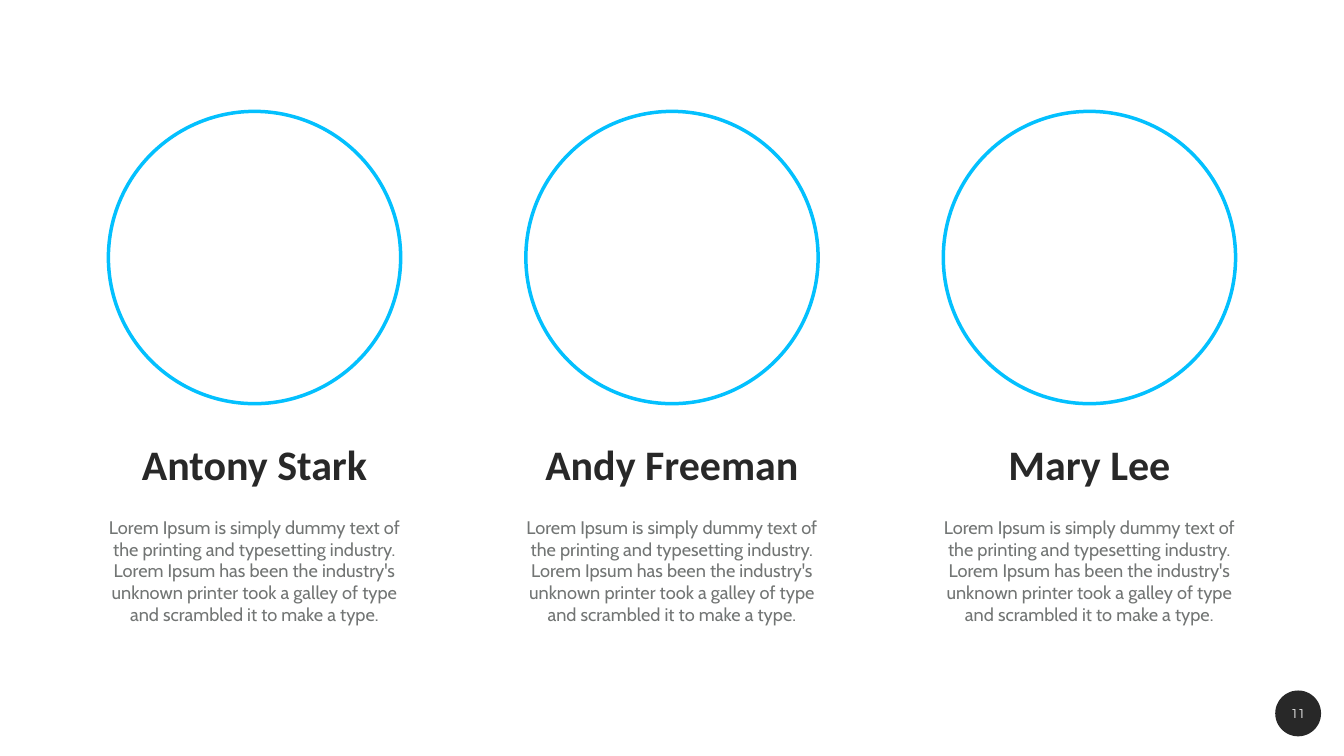
from pptx import Presentation
from pptx.dml.color import RGBColor
from pptx.enum.shapes import MSO_SHAPE as Shape
from pptx.enum.text import MSO_ANCHOR as Anchor, PP_ALIGN as Align
from pptx.util import Inches, Pt

BIO = (
    "Lorem Ipsum is simply dummy text of the printing and typesetting industry. "
    "Lorem Ipsum has been the industry's unknown printer took a galley of type "
    "and scrambled it to make a type."
)
TEAM = [("Antony Stark", BIO), ("Andy Freeman", BIO), ("Mary Lee", BIO)]
PAGE_NUMBER = "11"

DARK = RGBColor(0x28, 0x28, 0x28)
GREY = RGBColor(0x72, 0x75, 0x74)
CYAN = RGBColor(0x03, 0xC0, 0xFE)
WHITE = RGBColor(0xFF, 0xFF, 0xFF)

WIDTH, HEIGHT = 26.67, 15
COLUMN_PITCH = WIDTH * 0.3106
PORTRAIT_TOP, PORTRAIT_SIZE = 2.21, 5.8
NAME_TOP, NAME_WIDTH, NAME_HEIGHT = 8.71, 6.4, 1.11
BIO_TOP, BIO_WIDTH, BIO_HEIGHT = 10.2, 6.25, 2.54
BADGE_CENTER, BADGE_TOP, BADGE_SIZE = 25.76, 13.7, 0.91
NUMBER_TOP, NUMBER_WIDTH, NUMBER_HEIGHT = 13.96, 0.66, 0.39
INSET = 0.04


def centered_box(center, top, width, height):
    """Return the box in slide units for a shape centred on a vertical axis."""
    return [Inches(value) for value in (center - width / 2, top, width, height)]


def add_text(slide, text, box, *, font, size, color, bold=False,
             anchor=Anchor.TOP, line_spacing=None, tracking=None):
    """Add a centred text box with the given format."""
    frame = slide.shapes.add_textbox(*box).text_frame
    frame.word_wrap = True
    frame.vertical_anchor = anchor
    frame.margin_left = frame.margin_right = Inches(INSET)
    frame.margin_top = frame.margin_bottom = Inches(INSET)
    paragraph = frame.paragraphs[0]
    paragraph.alignment = Align.CENTER
    paragraph.line_spacing = line_spacing
    run = paragraph.add_run()
    run.text = text
    run.font.name = font
    run.font.size = Pt(size)
    run.font.bold = bold
    run.font.color.rgb = color
    if tracking:
        run.font._element.set("spc", str(round(tracking * 100)))


def add_circle(slide, box, *, fill=None, line=None, line_width=5):
    """Add a circle that is filled, outlined or both."""
    circle = slide.shapes.add_shape(Shape.OVAL, *box)
    circle.shadow.inherit = False
    if fill is None:
        circle.fill.background()
    else:
        circle.fill.solid()
        circle.fill.fore_color.rgb = fill
    if line is None:
        circle.line.fill.background()
    else:
        circle.line.color.rgb = line
        circle.line.width = Pt(line_width)


def main():
    """Build the team slide."""
    presentation = Presentation()
    presentation.slide_width = Inches(WIDTH)
    presentation.slide_height = Inches(HEIGHT)
    slide = presentation.slides.add_slide(presentation.slide_layouts[6])

    for column, (name, bio) in enumerate(TEAM):
        center = WIDTH / 2 + (column - (len(TEAM) - 1) / 2) * COLUMN_PITCH
        add_text(slide, bio, centered_box(center, BIO_TOP, BIO_WIDTH, BIO_HEIGHT),
                 font="Cabin", size=26, color=GREY)
        add_text(slide, name, centered_box(center, NAME_TOP, NAME_WIDTH, NAME_HEIGHT),
                 font="Calibri", size=60, color=DARK, bold=True,
                 anchor=Anchor.MIDDLE, line_spacing=0.9)
        add_circle(slide, centered_box(center, PORTRAIT_TOP, PORTRAIT_SIZE, PORTRAIT_SIZE),
                   line=CYAN)

    add_circle(slide, centered_box(BADGE_CENTER, BADGE_TOP, BADGE_SIZE, BADGE_SIZE), fill=DARK)
    add_text(slide, PAGE_NUMBER,
             centered_box(BADGE_CENTER, NUMBER_TOP, NUMBER_WIDTH, NUMBER_HEIGHT),
             font="Montserrat", size=18, color=WHITE, tracking=3.6)
    presentation.save("out.pptx")


if __name__ == "__main__":
    main()
